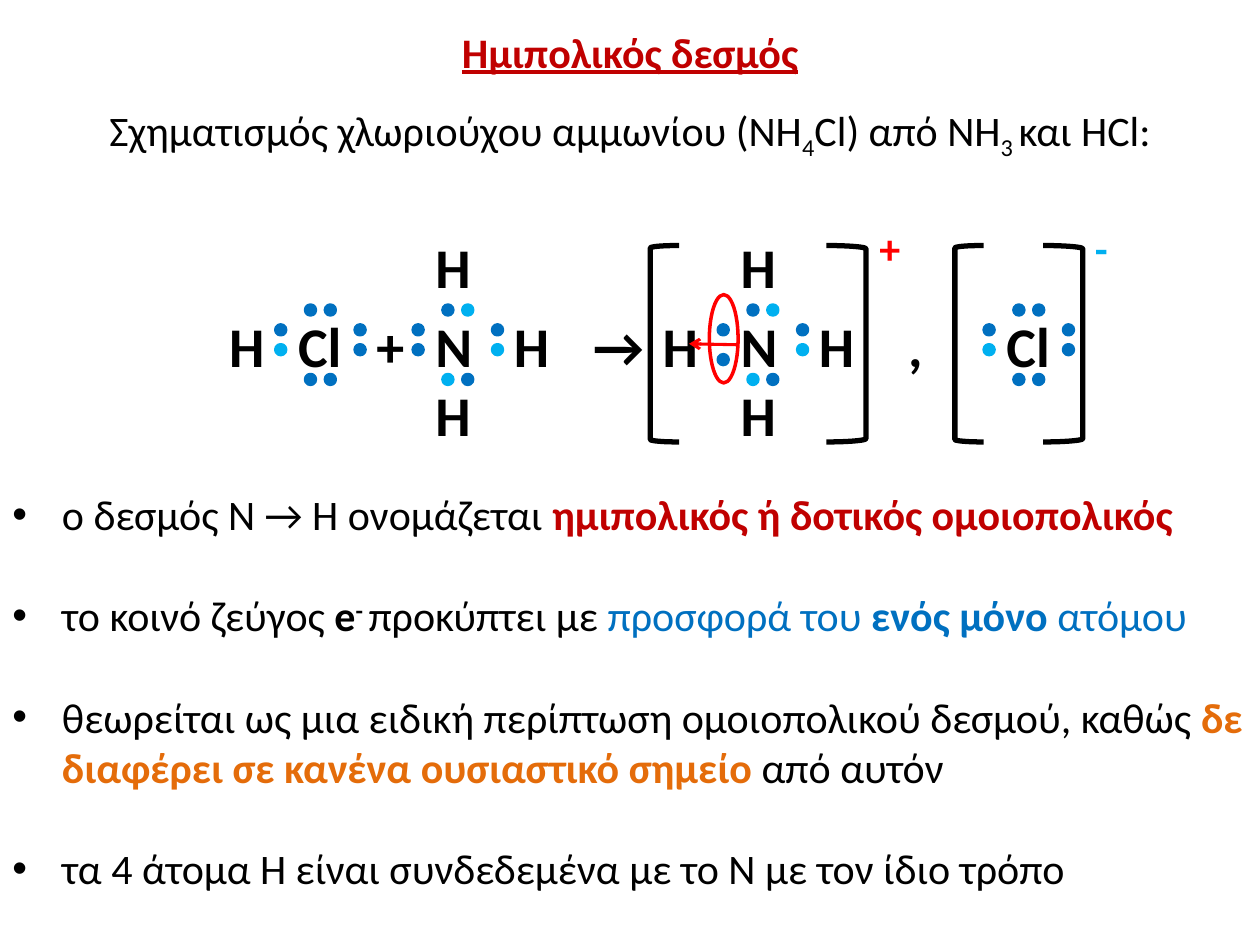
"""Build the slide on the coordinate bond in ammonium chloride."""
from lxml import etree
from pptx import Presentation
from pptx import util as u
from pptx.dml.color import RGBColor
from pptx.enum import shapes, text
from pptx.oxml.ns import qn

THEME = {
    "font": "Calibri", "body": 24, "atom": 32,
    "black": "000000", "dark": "C00000", "red": "FF0000",
    "blue": "0070C0", "sky": "00B0F0", "orange": "E46C0A",
}
KIND = shapes.MSO_SHAPE

TITLE = "Ημιπολικός δεσμός"
LEAD = [
    ("Σχηματισμός χλωριούχου αμμωνίου (ΝΗ",), ("4", "black", False, -25),
    ("Cl) από ΝΗ",), ("3 ", "black", False, -25), ("και HCl:",),
]
POINTS = [
    [("ο δεσμός Ν → Η ονομάζεται ",),
     ("ημιπολικός ή δοτικός ομοιοπολικός", "dark", True)],
    [("το κοινό ζεύγος ",), ("e", "black", True), ("- ", "black", True, 30),
     ("προκύπτει με ",), ("προσφορά του ", "blue"),
     ("ενός μόνο ", "blue", True), ("ατόμου", "blue")],
    [("θεωρείται ως μια ειδική περίπτωση ομοιοπολικού δεσμού, καθώς ",),
     ("δε διαφέρει σε κανένα ουσιαστικό σημείο ", "orange", True),
     ("από αυτόν",)],
    [("τα 4 άτομα Η είναι συνδεδεμένα με το Ν με τον ίδιο τρόπο",)],
]

ROW = 6.15
DOT = 0.2
SLOTS = [(0, 0.4), (0, 0.8), (0.6, 0), (1, 0),
         (1.6, 0.4), (1.6, 0.8), (0.6, 1.4), (1, 1.4)]
WIDTH = {"H": 1.24, "Η": 1.24, "Ν": 1.27, "Cl": 1.4,
         "+": 1.09, "→": 1.63, ",": 0.81}
HALO = {"Cl": "DLDDDDDD", "Ν": "DDDLDLLD"}
SHADE = {"D": "blue", "L": "sky"}
BOUND = [(0.2, -1.58), (0.2, 1.4), (1.78, 0)]
ATOMS = [("Cl", 5.56, 0), ("Ν", 8.33, 0), ("Ν", 14.48, 0.2), ("Cl", 19.84, 0)]
SIGNS = [("H", 4.37), ("+", 7.34), ("→", 11.71), ("H", 13.11), (",", 18.06)]
CHARGES = [("+", 17.48, 0.94, "red"), ("-", 21.82, 0.79, "sky")]
BRACKETS = [(KIND.LEFT_BRACKET, 13.11, 0.58), (KIND.RIGHT_BRACKET, 16.66, 0.8),
            (KIND.LEFT_BRACKET, 19.25, 0.58), (KIND.RIGHT_BRACKET, 21.03, 0.8)]


def tint(name):
    return RGBColor.from_string(THEME[name])


def write(para, parts, size):
    for part in parts:
        words, color, bold, base = part + ("black", False, 0)[len(part) - 1:]
        run = para.add_run()
        run.text = words
        font = run.font
        font.name, font.size, font.bold = THEME["font"], u.Pt(size), bold
        font.color.rgb = tint(color)
        if base:
            run._r.get_or_add_rPr().set("baseline", str(base * 1000))


def add_text(slide, spot, parts, size, wrap=False):
    box = slide.shapes.add_textbox(*map(u.Cm, spot))
    box.text_frame.word_wrap = wrap
    para = box.text_frame.paragraphs[0]
    write(para, parts, size)
    return box.text_frame


def add_sign(slide, sign, x, y):
    spot = (x, y, WIDTH[sign], 1.63)
    add_text(slide, spot, [(sign, "black", True)], THEME["atom"])


def add_shape(slide, kind, spot, color, width, fill=False):
    shape = slide.shapes.add_shape(kind, *map(u.Cm, spot))
    shape.shadow.inherit = False
    shape.line.color.rgb = tint(color)
    shape.line.width = u.Pt(width)
    if fill:
        shape.fill.solid()
        shape.fill.fore_color.rgb = tint(color)
    else:
        shape.fill.background()


def add_atom(slide, sign, x, drop):
    add_sign(slide, sign, x + DOT, ROW)
    for slot, (dx, dy) in enumerate(SLOTS):
        y = ROW + dy + (drop if slot == 1 else 0)
        color = SHADE[HALO[sign][slot]]
        add_shape(slide, KIND.OVAL, (x + dx, y, DOT, DOT), color, 2, True)
    if sign == "Ν":
        for dx, dy in BOUND:
            add_sign(slide, "Η", x + dx, ROW + dy)


def add_arrow(slide, ends):
    line = slide.shapes.add_connector(
        shapes.MSO_CONNECTOR.STRAIGHT, *map(u.Cm, ends))
    line.line.color.rgb = tint("red")
    line.line.width = u.Pt(1.75)
    props = line._element.spPr
    tip = etree.SubElement(props.find(qn("a:ln")), qn("a:tailEnd"))
    tip.set("type", "arrow")
    etree.SubElement(props, qn("a:effectLst"))


def add_points(slide):
    frame = add_text(slide, (0, 9.73, 25.4, 8.46), POINTS[0],
                     THEME["body"], True)
    for parts in POINTS[1:]:
        write(frame.add_paragraph(), parts, THEME["body"])
    for para in frame.paragraphs:
        if para is not frame.paragraphs[-1]:
            para.space_after = u.Pt(29)
        props = para._p.get_or_add_pPr()
        props.set("marL", str(u.Cm(1)))
        props.set("indent", str(u.Cm(-1)))
        etree.SubElement(props, qn("a:buFont")).set("typeface", "Arial")
        etree.SubElement(props, qn("a:buChar")).set("char", "•")


def add_title(slide):
    title = slide.shapes.title
    title.left, title.top, title.width, title.height = map(
        u.Cm, (0, 0.4, 25.4, 1.28))
    frame = title.text_frame
    frame.auto_size = text.MSO_AUTO_SIZE.NONE
    frame.vertical_anchor = text.MSO_ANCHOR.TOP
    para = frame.paragraphs[0]
    para.alignment = text.PP_ALIGN.CENTER
    write(para, [(TITLE, "dark", True)], THEME["body"])
    para.runs[0].font.underline = True


def main():
    deck = Presentation()
    deck.slide_width, deck.slide_height = u.Cm(25.4), u.Cm(19.05)
    slide = deck.slides.add_slide(deck.slide_layouts[5])
    add_title(slide)
    lead = add_text(slide, (0, 1.98, 25.4, 1.28), LEAD, THEME["body"], True)
    lead.paragraphs[0].alignment = text.PP_ALIGN.CENTER
    for atom in ATOMS:
        add_atom(slide, *atom)
    for sign, x in SIGNS:
        add_sign(slide, sign, x, ROW)
    for sign, x, wide, color in CHARGES:
        add_text(slide, (x, 4.37, wide, 1.28), [(sign, color, True)],
                 THEME["body"])
    for kind, x, wide in BRACKETS:
        add_shape(slide, kind, (x, 4.95, wide, 3.96), "black", 3)
    add_shape(slide, KIND.OVAL, (14.3, 5.94, 0.58, 1.78), "red", 2)
    add_points(slide)
    add_arrow(slide, (14.88, 6.95, 13.89, 6.93))
    deck.save("out.pptx")


if __name__ == "__main__":
    main()
